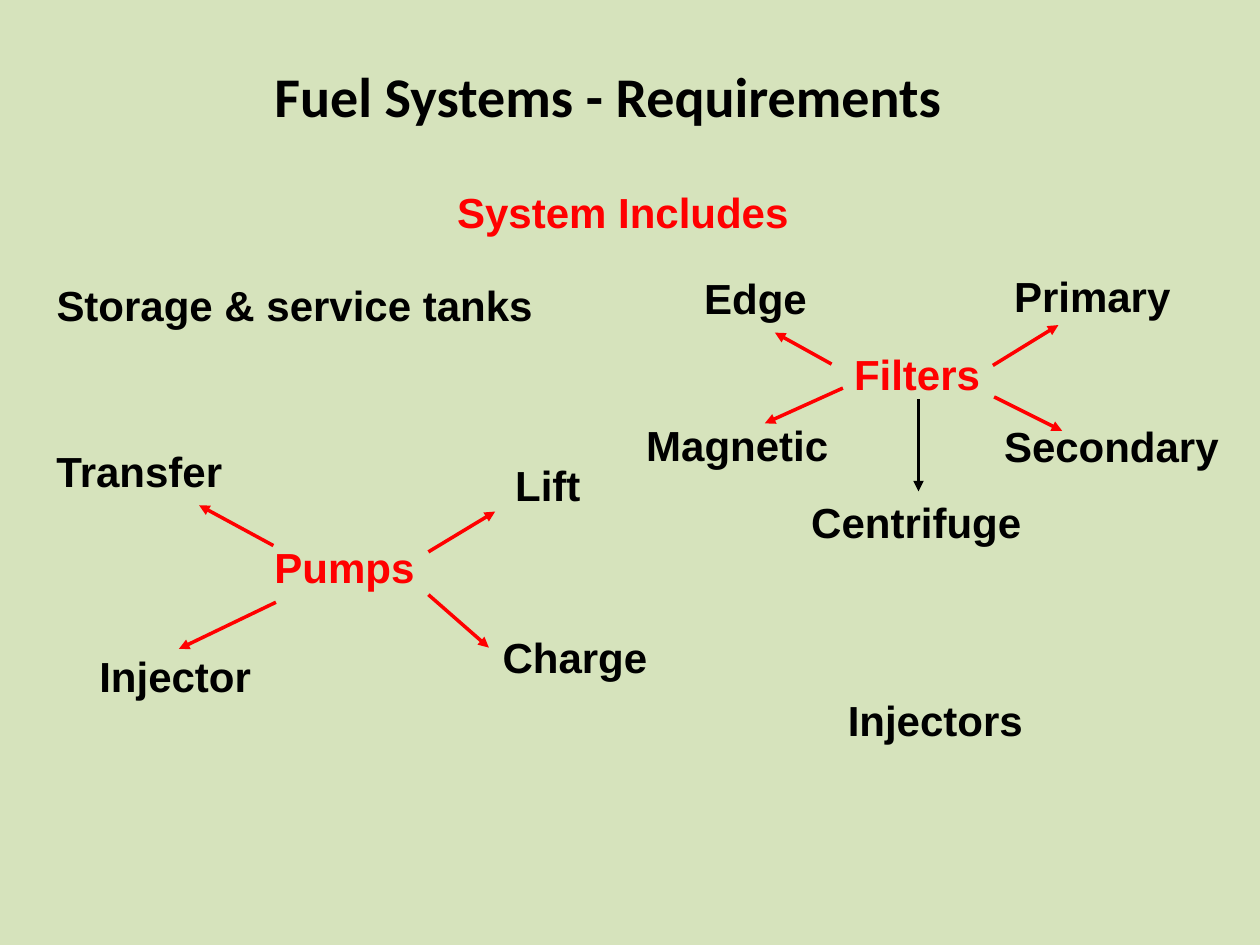
from lxml.etree import SubElement
from pptx import Presentation
from pptx.dml.color import RGBColor
from pptx.enum.shapes import MSO_CONNECTOR
from pptx.oxml.ns import qn
from pptx.util import Inches, Pt

GREEN = RGBColor(0xD6, 0xE3, 0xBC)
RED = RGBColor(0xFF, 0, 0)
BLACK = RGBColor(0, 0, 0)
LABEL_HEIGHT = 0.5

# Text, left, top, width
HEADINGS = [
    ("System Includes", 3.53, 1.43, 2.83),
    ("Filters", 6.68, 2.72, 1.2),
    ("Pumps", 2.08, 4.25, 1.31),
]
PARTS = [
    ("Storage & service tanks", 0.35, 2.17, 3.98),
    ("Transfer", 0.35, 3.49, 1.54),
    ("Lift", 3.99, 3.6, 0.72),
    ("Charge", 3.89, 4.96, 1.35),
    ("Injector", 0.69, 5.11, 1.45),
    ("Primary", 7.95, 2.1, 1.44),
    ("Secondary", 7.87, 3.29, 1.91),
    ("Edge", 5.49, 2.11, 1.02),
    ("Magnetic", 5.03, 3.28, 1.65),
    ("Centrifuge", 6.34, 3.89, 1.87),
    ("Injectors", 6.63, 5.46, 1.59),
]

# Start x, start y, end x, end y, colour
FILTER_ARROWS = [
    (7.88, 2.9, 8.4, 2.58, RED),      # Primary
    (7.89, 3.15, 8.43, 3.42, RED),    # Secondary
    (6.6, 2.89, 6.15, 2.64, RED),     # Edge
    (6.69, 3.08, 6.07, 3.36, RED),    # Magnetic
    (7.29, 3.17, 7.29, 3.9, BLACK),   # Centrifuge
]
PUMP_ARROWS = [
    (2.17, 4.33, 1.58, 4.01, RED),    # Transfer
    (3.4, 4.38, 3.93, 4.06, RED),     # Lift
    (3.4, 4.72, 3.88, 5.14, RED),     # Charge
    (2.19, 4.78, 1.42, 5.15, RED),    # Injector
]


def add_label(s, text, left, top, width, color, height=LABEL_HEIGHT,
              font="Arial", size=24):
    sp = s.shapes.add_textbox(*map(Inches, (left, top, width, height)))
    tf = sp.text_frame
    tf.text = text
    tf.word_wrap = False
    r = tf.paragraphs[0].runs[0]
    r.font.name = font
    r.font.size = Pt(size)
    r.font.bold = True
    r.font.color.rgb = color


def add_arrow(s, x1, y1, x2, y2, color):
    arrow = s.shapes.add_connector(MSO_CONNECTOR.STRAIGHT,
                                   *map(Inches, (x1, y1, x2, y2)))
    arrow.line.color.rgb = color
    arrow.line.width = Pt(2)
    sp_pr = arrow._element.spPr
    SubElement(sp_pr.find(qn("a:ln")), qn("a:tailEnd"), type="triangle")
    SubElement(sp_pr, qn("a:effectLst"))


def main():
    prs = Presentation()
    prs.slide_width, prs.slide_height = Inches(10), Inches(7.5)
    s = prs.slides.add_slide(prs.slide_layouts[6])
    s.background.fill.solid()
    s.background.fill.fore_color.rgb = GREEN

    add_label(s, "Fuel Systems - Requirements", 2.08, 0.44, 5.54, BLACK,
              height=0.64, font="Calibri", size=32)
    for labels, color in ((HEADINGS, RED), (PARTS, BLACK)):
        for label in labels:
            add_label(s, *label, color)
    for arrow in FILTER_ARROWS + PUMP_ARROWS:
        add_arrow(s, *arrow)

    prs.save("out.pptx")


if __name__ == "__main__":
    main()
